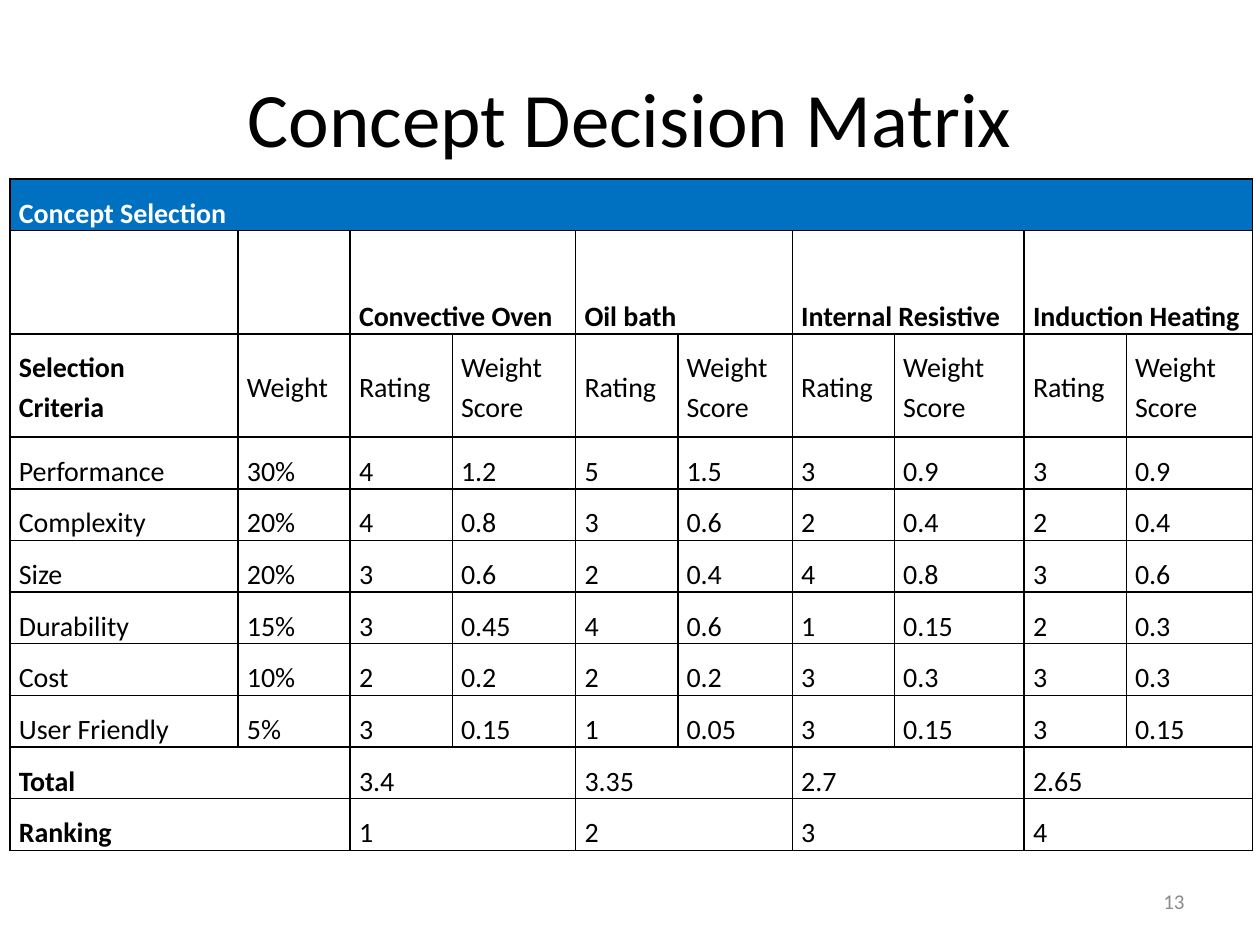
from dataclasses import dataclass

import pptx
import pptx.dml.color
import pptx.enum.text
import pptx.oxml
import pptx.oxml.ns
import pptx.util
from pptx.dml.color import RGBColor
from pptx.util import Inches, Pt

BLACK = RGBColor(0x00, 0x00, 0x00)
WHITE = RGBColor(0xFF, 0xFF, 0xFF)
BLUE = RGBColor(0x00, 0x70, 0xC0)
GRAY = RGBColor(0x8C, 0x8C, 0x8C)
FONT = "Calibri"

ALIGN = pptx.enum.text.PP_ALIGN
ANCHOR = pptx.enum.text.MSO_ANCHOR

COLUMN_WIDTHS = [1.81, 0.89, 0.81, 0.98, 0.81, 0.91, 0.81, 1.03, 0.81, 1.0]
ROW_HEIGHT = 0.41
TALL_ROWS = (1, 2)


@dataclass
class Criterion:
    name: str
    weight: int  # percent
    ratings: tuple[int, ...]  # one per concept


CONCEPTS = ["Convective Oven", "Oil bath", "Internal Resistive", "Induction Heating"]
CRITERIA = [
    Criterion("Performance", 30, (4, 5, 3, 3)),
    Criterion("Complexity", 20, (4, 3, 2, 2)),
    Criterion("Size", 20, (3, 2, 4, 3)),
    Criterion("Durability", 15, (3, 4, 1, 2)),
    Criterion("Cost", 10, (2, 2, 3, 3)),
    Criterion("User Friendly", 5, (3, 1, 3, 3)),
]
TOTAL_ROW = 3 + len(CRITERIA)
RANKING_ROW = TOTAL_ROW + 1


def set_text(paragraph, text: str, size: float, color: RGBColor, align, bold: bool = False) -> None:
    paragraph.text = text
    paragraph.alignment = align
    font = paragraph.font
    font.name, font.size, font.bold = FONT, Pt(size), bold
    font.color.rgb = color


def add_borders(cell) -> None:
    properties = cell._tc.get_or_add_tcPr()
    for side in ("lnL", "lnR", "lnT", "lnB"):
        properties.append(pptx.oxml.parse_xml(
            f'<a:{side} {pptx.oxml.ns.nsdecls("a")} w="{Pt(1)}"><a:solidFill>'
            f'<a:srgbClr val="{BLACK}"/></a:solidFill></a:{side}>'))


def fill_cell(table, row: int, column: int, text: str, span: int = 1, bold: bool = False,
              color: RGBColor = BLACK, anchor=ANCHOR.BOTTOM) -> None:
    cell = table.cell(row, column)
    if span > 1:
        cell.merge(table.cell(row, column + span - 1))
    cell.vertical_anchor = anchor
    paragraph = cell.text_frame.paragraphs[0]
    set_text(paragraph, text, 16, color, ALIGN.JUSTIFY, bold)
    paragraph.line_spacing = 1.15


def format_grid(table) -> None:
    for column, width in zip(table.columns, COLUMN_WIDTHS):
        column.width = Inches(width)
    for index, row in enumerate(table.rows):
        row.height = Inches(ROW_HEIGHT * (2 if index in TALL_ROWS else 1))
        for cell in row.cells:
            cell.margin_left = cell.margin_right = Inches(0.07)
            cell.margin_top = cell.margin_bottom = 0
            add_borders(cell)
            if index == 0:
                cell.fill.solid()
                cell.fill.fore_color.rgb = BLUE
            else:
                cell.fill.background()


def add_matrix(slide) -> None:
    height = ROW_HEIGHT * (RANKING_ROW + 1 + len(TALL_ROWS))
    table = slide.shapes.add_table(
        RANKING_ROW + 1, len(COLUMN_WIDTHS), Inches(0.08), Inches(1.42),
        Inches(sum(COLUMN_WIDTHS)), Inches(height)).table
    table.first_row = table.horz_banding = False
    format_grid(table)

    fill_cell(table, 0, 0, "Concept Selection", len(COLUMN_WIDTHS), True, WHITE)
    fill_cell(table, 2, 0, "Selection \nCriteria", bold=True, anchor=ANCHOR.MIDDLE)
    fill_cell(table, 2, 1, "Weight", anchor=ANCHOR.MIDDLE)
    for row, criterion in enumerate(CRITERIA, start=3):
        fill_cell(table, row, 0, criterion.name)
        fill_cell(table, row, 1, f"{criterion.weight}%")
    fill_cell(table, TOTAL_ROW, 0, "Total", 2, True)
    fill_cell(table, RANKING_ROW, 0, "Ranking", 2, True)

    totals = [sum(c.weight * c.ratings[i] for c in CRITERIA) for i in range(len(CONCEPTS))]
    ranked = sorted(totals, reverse=True)
    for index, concept in enumerate(CONCEPTS):
        column = 2 + 2 * index
        fill_cell(table, 1, column, concept, 2, True)
        fill_cell(table, 2, column, "Rating", anchor=ANCHOR.MIDDLE)
        fill_cell(table, 2, column + 1, "Weight\nScore", anchor=ANCHOR.MIDDLE)
        for row, criterion in enumerate(CRITERIA, start=3):
            rating = criterion.ratings[index]
            fill_cell(table, row, column, str(rating))
            fill_cell(table, row, column + 1, f"{criterion.weight * rating / 100:g}")
        fill_cell(table, TOTAL_ROW, column, f"{totals[index] / 100:g}", 2)
        fill_cell(table, RANKING_ROW, column, str(ranked.index(totals[index]) + 1), 2)


def add_title(slide, text: str) -> None:
    title = slide.shapes.title
    title.left, title.top = Inches(0.5), Inches(0.3)
    title.width, title.height = Inches(9), Inches(1.25)
    title.text_frame.vertical_anchor = ANCHOR.MIDDLE
    set_text(title.text_frame.paragraphs[0], text, 44, BLACK, ALIGN.CENTER)


def add_page_number(slide, number: int) -> None:
    box = slide.shapes.add_textbox(Inches(7.17), Inches(6.95), Inches(2.33), Inches(0.4))
    box.text_frame.word_wrap = True
    box.text_frame.vertical_anchor = ANCHOR.MIDDLE
    set_text(box.text_frame.paragraphs[0], str(number), 12, GRAY, ALIGN.RIGHT)


def main() -> None:
    presentation = pptx.Presentation()
    presentation.slide_width, presentation.slide_height = Inches(10), Inches(7.5)
    slide = presentation.slides.add_slide(presentation.slide_layouts[5])
    add_title(slide, "Concept Decision Matrix")
    add_page_number(slide, 13)
    add_matrix(slide)
    presentation.save("out.pptx")


if __name__ == "__main__":
    main()
